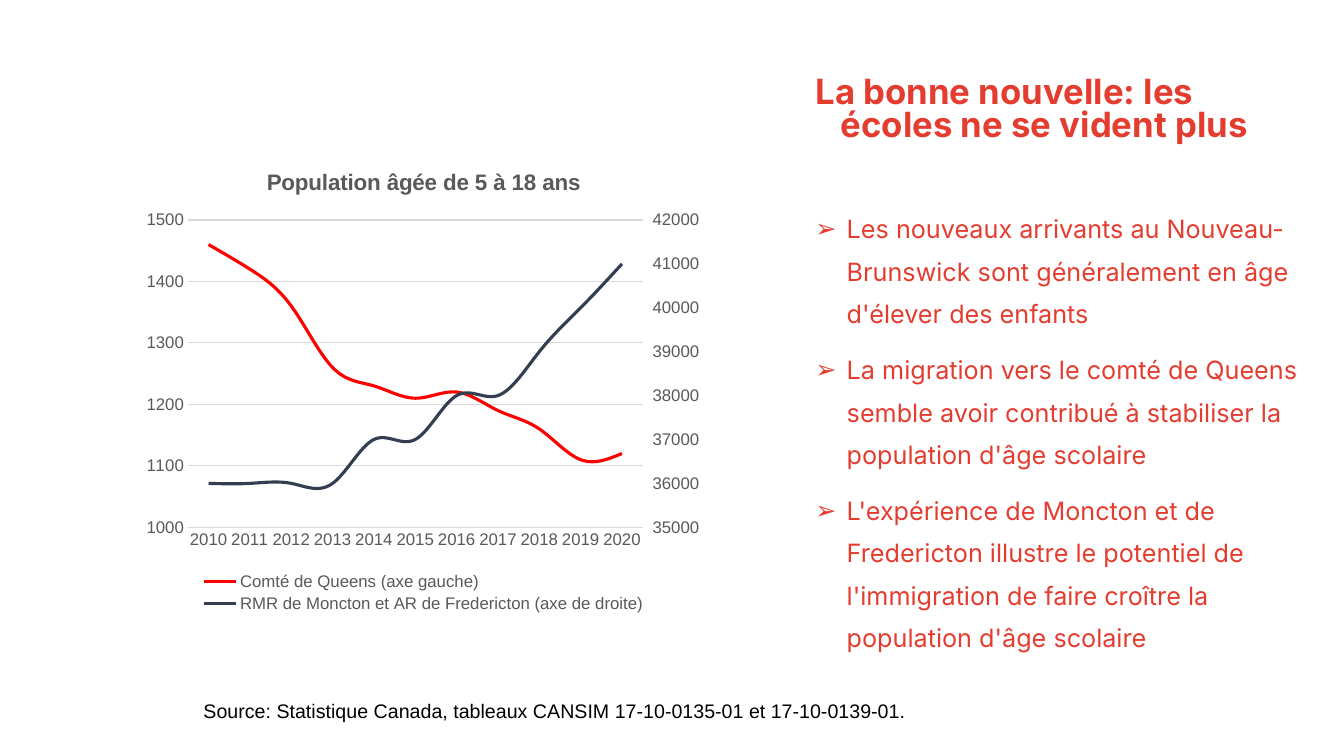
import copy

import pptx
import pptx.chart.data
import pptx.dml.color
import pptx.enum.chart
import pptx.oxml
import pptx.oxml.ns
import pptx.util
from pptx.util import Inches

HUES = {"red": "E43D30", "black": "000000", "gray": "595959",
        "grid": "D9D9D9", "queens": "FF0000", "cities": "333F50"}
NS = 'xmlns:c="http://schemas.openxmlformats.org/drawingml/2006/chart"'
qn = pptx.oxml.ns.qn


def style(font, face, size, hue, bold=False):
    font.name, font.size, font.bold = face, pptx.util.Pt(size), bold
    font.color.rgb = pptx.dml.color.RGBColor.from_string(HUES[hue])


def place(node, spot, inner, **box):
    """Give a chart part a fixed place, in shares of the chart."""
    for old in node.findall(qn("c:layout")):
        node.remove(old)
    target = '<c:layoutTarget val="inner"/>' if inner else ""
    modes = '<c:xMode val="edge"/><c:yMode val="edge"/>'
    sizes = "".join(f'<c:{key} val="{val}"/>' for key, val in box.items())
    node.insert(spot, pptx.oxml.parse_xml(
        f"<c:layout {NS}><c:manualLayout>{target}{modes}{sizes}"
        "</c:manualLayout></c:layout>"))


deck = pptx.Presentation()
deck.slide_width, deck.slide_height = Inches(13.33), Inches(7.5)
slide = deck.slides.add_slide(deck.slide_layouts[6])

# Text: box, paragraphs, font, indents, line spacing, bullet
texts = [
    ((7.74, 0.72, 5.09, 1.09),
     ["La bonne nouvelle: les écoles ne se vident plus"],
     ("Inter", 24.8, "red", True), (0.5, -0.25), 0.8, None),
    ((7.74, 1.95, 5.27, 4.78),
     ["Les nouveaux arrivants au Nouveau-Brunswick sont généralement "
      "en âge d'élever des enfants",
      "La migration vers le comté de Queens semble avoir contribué à "
      "stabiliser la population d'âge scolaire",
      "L'expérience de Moncton et de Fredericton illustre le potentiel "
      "de l'immigration de faire croître la population d'âge scolaire"],
     ("Inter", 18, "red"), (0.56, -0.31), 1.4, "➢"),
    ((1.92, 6.88, 9.36, 0.34),
     ["Source: Statistique Canada, tableaux CANSIM 17-10-0135-01 "
      "et 17-10-0139-01."],
     ("Arial", 14, "black"), (0, 0), 1, None),
]
for box, lines, look, (left, hang), lead, mark in texts:
    frame = slide.shapes.add_textbox(*map(Inches, box)).text_frame
    frame.word_wrap = True
    for num, line in enumerate(lines):
        para = frame.add_paragraph() if num else frame.paragraphs[0]
        para.text = line
        props = para._p.get_or_add_pPr()
        props.set("marL", str(Inches(left)))
        props.set("indent", str(Inches(hang)))
        if mark:
            tint = props.makeelement(qn("a:buClr"), {})
            tint.append(tint.makeelement(qn("a:srgbClr"),
                                         {"val": HUES["red"]}))
            props.append(tint)
            props.append(props.makeelement(qn("a:buFont"),
                                           {"typeface": "Arial"}))
            props.append(props.makeelement(qn("a:buChar"), {"char": mark}))
        para.line_spacing = lead
        if num:
            para.space_before = pptx.util.Pt(10)
        style(para.runs[0].font, *look)

# Chart data
data = pptx.chart.data.CategoryChartData()
data.categories = [str(year) for year in range(2010, 2021)]
data.add_series("Comté de Queens (axe gauche)",
                [1460, 1420, 1360, 1260, 1230, 1210, 1220, 1190, 1160,
                 1110, 1120])
data.add_series("RMR de Moncton et AR de Fredericton (axe de droite)",
                [36000, 36000, 36000, 36000, 37000, 37000, 38000, 38000,
                 39000, 40000, 41000])
kinds = pptx.enum.chart
chart = slide.shapes.add_chart(
    kinds.XL_CHART_TYPE.LINE, Inches(1.35), Inches(1.49), Inches(5.71),
    Inches(4.62), data).chart
style(chart.font, "Arial", 10, "black")
chart.plots[0].vary_by_categories = False

# Title and legend
chart.has_title = True
head = chart.chart_title.text_frame
head.text = "Population âgée de 5 à 18 ans"
style(head.paragraphs[0].runs[0].font, "Arial", 16, "gray", True)
chart.has_legend = True
chart.legend.position = kinds.XL_LEGEND_POSITION.BOTTOM
chart.legend.include_in_layout = False
style(chart.legend.font, "Arial", 12, "gray")

# Lines
for line, hue in zip(chart.plots[0].series, ("queens", "cities")):
    line.smooth = True
    line.marker.style = kinds.XL_MARKER_STYLE.NONE
    line.format.line.width = pptx.util.Pt(2.25)
    line.format.line.color.rgb = pptx.dml.color.RGBColor.from_string(HUES[hue])

# Axes
years, scale = chart.category_axis, chart.value_axis
for axis in (years, scale):
    axis.major_tick_mark = axis.minor_tick_mark = kinds.XL_TICK_MARK.NONE
    style(axis.tick_labels.font, "Arial", 12, "gray")
scale.minimum_scale, scale.maximum_scale, scale.major_unit = 1000, 1500, 100
scale.has_major_gridlines = True
for rule in (years.format.line, scale.major_gridlines.format.line):
    rule.color.rgb = pptx.dml.color.RGBColor.from_string(HUES["grid"])
    rule.width = pptx.util.Pt(0.75)
scale.format.line.fill.background()

# Second plot and its right axis, made from the first
area = chart._chartSpace.find(".//" + qn("c:plotArea"))
first = area.find(qn("c:lineChart"))
second = copy.deepcopy(first)
first.remove(first.findall(qn("c:ser"))[1])
second.remove(second.findall(qn("c:ser"))[0])
first.addnext(second)
cats, vals = area.find(qn("c:catAx")), area.find(qn("c:valAx"))
cats2, vals2 = copy.deepcopy(cats), copy.deepcopy(vals)
vals.addnext(vals2)
vals2.addnext(cats2)
swap = {cats.find(qn("c:axId")).get("val"): "5001",
        vals.find(qn("c:axId")).get("val"): "5002"}
for part in (second, cats2, vals2):
    for tag in ("c:axId", "c:crossAx"):
        for node in part.findall(qn(tag)):
            node.set("val", swap[node.get("val")])
cats2.find(qn("c:delete")).set("val", "1")
cats2.replace(cats2.find(qn("c:spPr")),
              copy.deepcopy(vals2.find(qn("c:spPr"))))
vals2.remove(vals2.find(qn("c:majorGridlines")))
for tag, val in (("c:axPos", "r"), ("c:crosses", "max"),
                 ("c:majorTickMark", "out"), ("c:majorUnit", "1000"),
                 ("c:scaling/c:min", "35000"), ("c:scaling/c:max", "42000")):
    vals2.find("/".join(map(qn, tag.split("/")))).set("val", val)

# Places inside the chart
place(area, 0, True, x=0.09, y=0.15, w=0.79, h=0.66)
place(chart.chart_title._element, 1, False, x=0.22, y=0.03)
place(chart.legend._element, 1, False, x=0.11, y=0.9, w=0.78, h=0.1)

deck.save("out.pptx")
